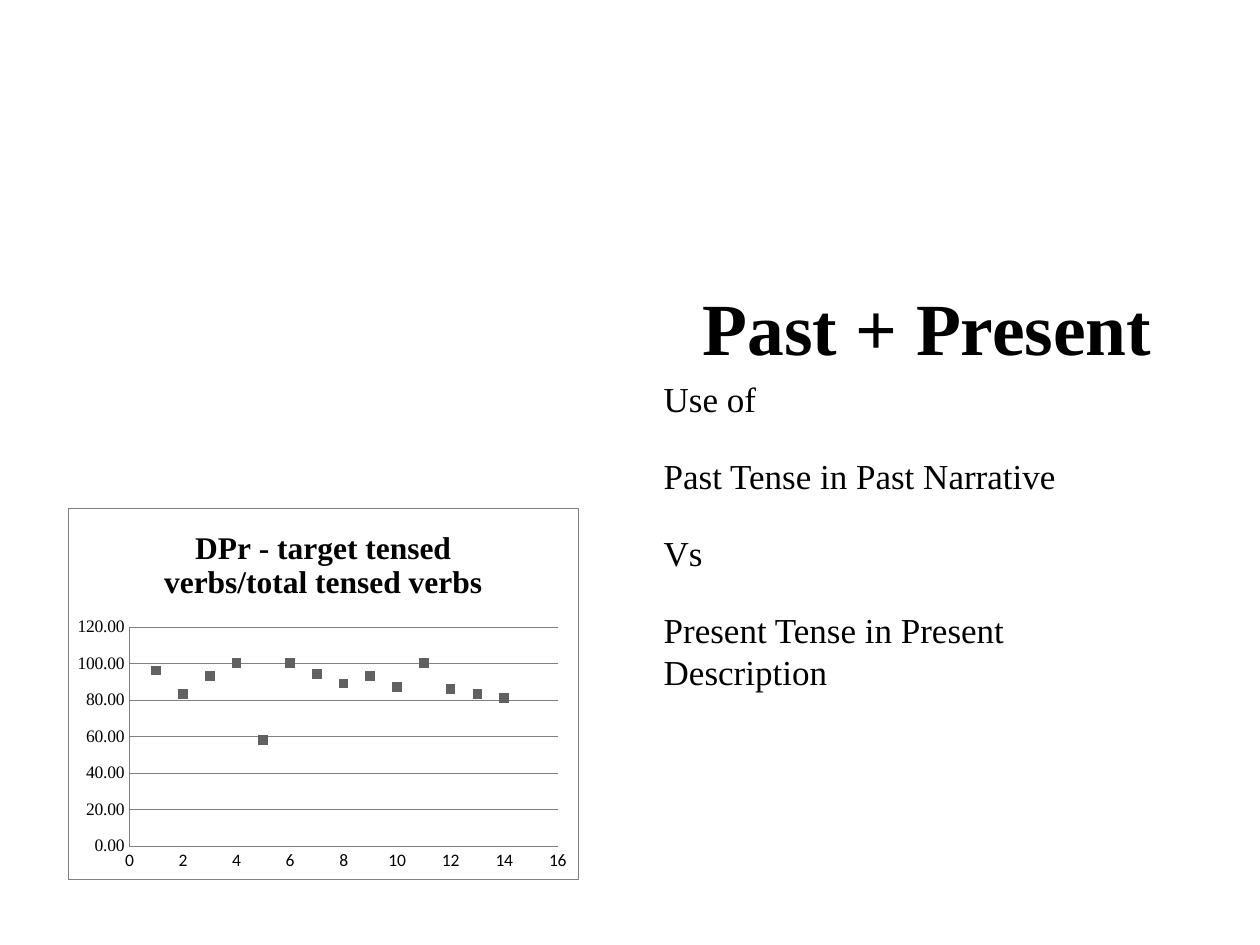
"""Build the Past + Present slide with its scatter chart of tensed verbs."""
from dataclasses import dataclass

from lxml.etree import fromstring
from pptx import Presentation
from pptx.chart.data import XyChartData
from pptx.dml.color import RGBColor
from pptx.enum.chart import XL_CHART_TYPE, XL_MARKER_STYLE, XL_TICK_MARK
from pptx.enum.text import MSO_ANCHOR
from pptx.oxml.ns import nsdecls, qn
from pptx.util import Cm, Pt

TITLE = "Past + Present"
BODY = [
    "Use of",
    "Past Tense in Past Narrative",
    "Vs",
    "Present Tense in Present Description",
]
CHART_TITLE = "DPr - target tensed verbs/total tensed verbs"
PERCENTAGES = [96, 83, 93, 100, 58, 100, 94, 89, 93, 87, 100, 86, 83, 81]
PLOT_LAYOUT = {"x": 0.12, "y": 0.32, "w": 0.84, "h": 0.59}
BOXES = {
    "title": (13.92, 4.24, 9.91, 3.23),
    "body": (13.13, 7.49, 10.8, 6.02),
    "chart": (1.37, 10.24, 10.29, 7.49),
}


@dataclass(frozen=True)
class Theme:
    serif: str = "Times New Roman"
    sans: str = "Calibri"
    text: str = "000000"
    background: str = "FFFFFF"
    line: str = "808080"
    marker: str = "616161"
    title_size: int = 42
    body_size: int = 20
    chart_title_size: int = 18
    axis_size: int = 10
    line_width: float = 0.25


THEME = Theme()


def box(name):
    return [Cm(length) for length in BOXES[name]]


def set_font(font, size, name=THEME.serif, bold=False):
    font.name, font.size, font.bold = name, Pt(size), bold
    font.color.rgb = RGBColor.from_string(THEME.text)


def set_line(line):
    line.color.rgb = RGBColor.from_string(THEME.line)
    line.width = Pt(THEME.line_width)


def add_text(slide, name, lines, size, spacing, before=0, bold=False):
    frame = slide.shapes.add_textbox(*box(name)).text_frame
    frame.word_wrap = True
    for index, line in enumerate(lines):
        paragraph = frame.add_paragraph() if index else frame.paragraphs[0]
        paragraph.text = line
        paragraph.line_spacing = Pt(spacing)
        paragraph.space_before = Pt(before if index else 0)
        set_font(paragraph.font, size, bold=bold)
    return frame


def area_format(outline):
    return fromstring(
        f'<c:spPr {nsdecls("c", "a")}><a:solidFill><a:srgbClr val="{THEME.background}"/>'
        f"</a:solidFill>{outline}</c:spPr>"
    )


def format_areas(chart):
    outline = (
        f'<a:ln w="{Pt(THEME.line_width)}"><a:solidFill><a:srgbClr val="{THEME.line}"/>'
        "</a:solidFill></a:ln>"
    )
    chart_element = chart.element.find(qn("c:chart"))
    chart_element.addnext(area_format(outline))
    plot_area = chart_element.find(qn("c:plotArea"))
    plot_area.append(area_format("<a:ln><a:noFill/></a:ln>"))
    for layout in plot_area.findall(qn("c:layout")):
        plot_area.remove(layout)
    modes = "".join(f'<c:{side}Mode val="edge"/>' for side in "xy")
    sizes = "".join(f'<c:{side} val="{value}"/>' for side, value in PLOT_LAYOUT.items())
    plot_area.insert(0, fromstring(
        f'<c:layout {nsdecls("c")}><c:manualLayout><c:layoutTarget val="inner"/>'
        f"{modes}{sizes}</c:manualLayout></c:layout>"
    ))


def format_axis(axis, maximum, step, number_format, font_name, gridlines):
    axis.minimum_scale, axis.maximum_scale, axis.major_unit = 0, maximum, step
    axis.major_tick_mark = axis.minor_tick_mark = XL_TICK_MARK.NONE
    axis.has_major_gridlines = gridlines
    if gridlines:
        set_line(axis.major_gridlines.format.line)
    set_line(axis.format.line)
    axis.tick_labels.number_format = number_format
    axis.tick_labels.number_format_is_linked = False
    set_font(axis.tick_labels.font, THEME.axis_size, font_name)


def add_scatter(slide):
    data = XyChartData()
    points = data.add_series("Series 1")
    for position, percentage in enumerate(PERCENTAGES, start=1):
        points.add_data_point(position, percentage)
    chart = slide.shapes.add_chart(XL_CHART_TYPE.XY_SCATTER, *box("chart"), data).chart
    set_font(chart.font, THEME.axis_size)
    chart.has_legend = False
    chart.has_title = True
    paragraph = chart.chart_title.text_frame.paragraphs[0]
    paragraph.text = CHART_TITLE
    set_font(paragraph.font, THEME.chart_title_size, bold=True)
    format_axis(chart.category_axis, 16, 2, "General", THEME.sans, False)
    format_axis(chart.value_axis, 120, 20, "0.00", THEME.serif, True)
    chart.plots[0].vary_by_categories = False
    series = chart.plots[0].series[0]
    series.format.line.fill.background()
    series.marker.style, series.marker.size = XL_MARKER_STYLE.SQUARE, 5
    series.marker.format.fill.solid()
    series.marker.format.fill.fore_color.rgb = RGBColor.from_string(THEME.marker)
    series.marker.format.line.color.rgb = RGBColor.from_string(THEME.marker)
    format_areas(chart)


def main():
    presentation = Presentation()
    presentation.slide_width, presentation.slide_height = Cm(25.4), Cm(19.05)
    slide = presentation.slides.add_slide(presentation.slide_layouts[6])
    title = add_text(slide, "title", [TITLE], THEME.title_size, spacing=46, bold=True)
    title.vertical_anchor = MSO_ANCHOR.BOTTOM
    title.margin_top = title.margin_bottom = 0
    add_text(slide, "body", BODY, THEME.body_size, spacing=24, before=20)
    add_scatter(slide)
    presentation.save("out.pptx")


if __name__ == "__main__":
    main()
